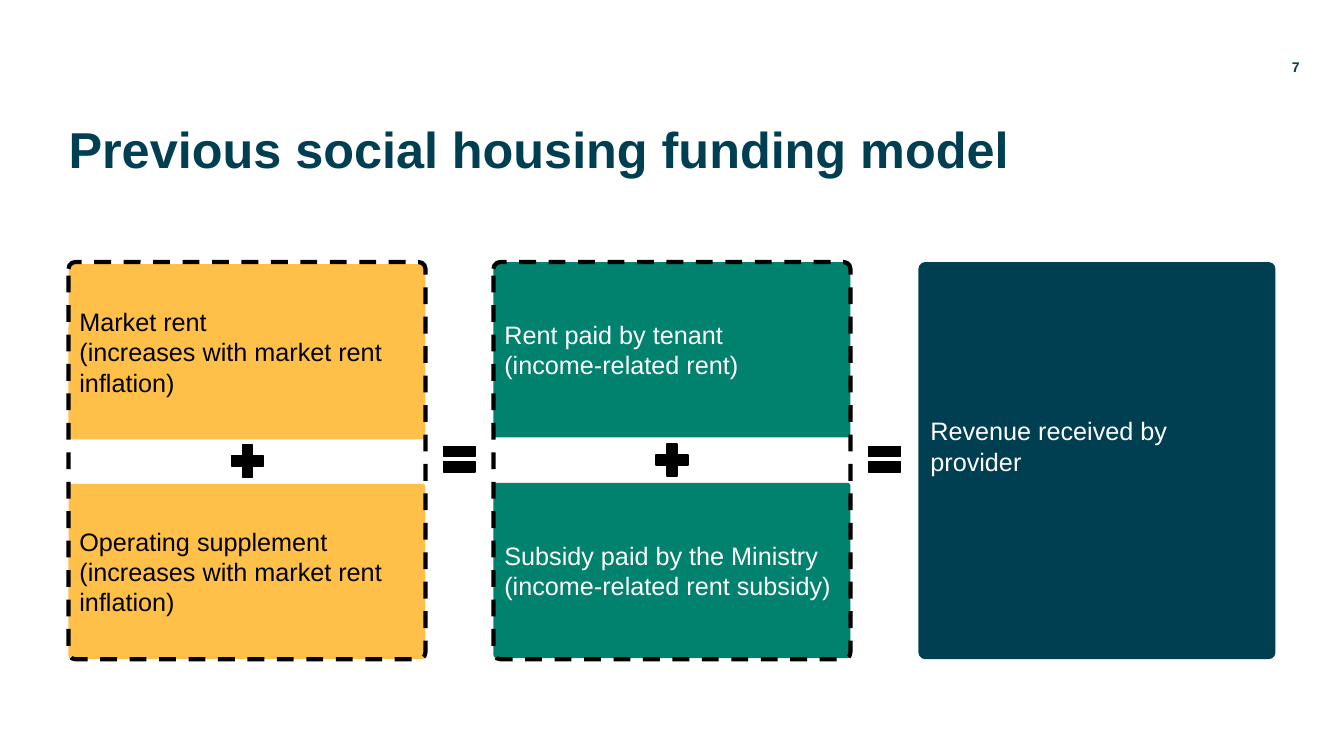
from dataclasses import dataclass
from pptx import Presentation
from pptx.dml.color import RGBColor
from pptx.enum.dml import MSO_LINE
from pptx.enum.shapes import MSO_SHAPE
from pptx.enum.text import MSO_ANCHOR, PP_ALIGN
from pptx.util import Inches, Pt

NAVY, GREEN, GOLD = "003E52", "00826E", "FFC04A"
BLACK, WHITE = "000000", "FFFFFF"
LEFT, TOP, STEP = 0.68, 2.6, 4.215
WIDE, TALL, HALF, SIGN = 3.54, 3.94, 1.74, 0.43


@dataclass
class Card:
    col: int
    top: float
    high: float
    fill: str
    ink: str
    lines: list[str]
    foot: float = 0.05


@dataclass
class Mark:
    kind: MSO_SHAPE
    left: float
    top: float


CARDS = [
    Card(2, TOP, TALL, NAVY, WHITE, ["Revenue received by provider"], 0.34),
    Card(1, TOP, HALF, GREEN, WHITE,
         ["Rent paid by tenant", "(income-related rent)"]),
    Card(1, 4.79, HALF, GREEN, WHITE,
         ["Subsidy paid by the Ministry", "(income-related rent subsidy)"]),
    Card(0, 2.62, HALF, GOLD, BLACK,
         ["Market rent", "(increases with market rent inflation)"]),
    Card(0, 4.8, HALF, GOLD, BLACK,
         ["Operating supplement", "(increases with market rent inflation)"]),
]
MARKS = [
    Mark(MSO_SHAPE.MATH_EQUAL, 4.34, 4.34),
    Mark(MSO_SHAPE.MATH_EQUAL, 8.56, 4.34),
    Mark(MSO_SHAPE.MATH_PLUS, 2.24, 4.36),
    Mark(MSO_SHAPE.MATH_PLUS, 6.45, 4.35),
]


def tint(form, code: str) -> None:
    if hasattr(form, "solid"):
        form.solid()
        form = form.fore_color
    form.rgb = RGBColor.from_string(code)


def put(item, traits: dict) -> None:
    for name, value in traits.items():
        setattr(item, name, value)


def write(frame, lines: list[str], size: int, ink: str, bold: bool,
          align: PP_ALIGN, frame_traits: dict) -> None:
    put(frame, {"word_wrap": True, **frame_traits})
    frame.text = "\n".join(lines)
    for para in frame.paragraphs:
        para.alignment = align
        put(para.font, {"name": "Arial", "size": Pt(size), "bold": bold})
        tint(para.font.color, ink)


def shape(slide, kind: MSO_SHAPE, left: float, top: float,
          wide: float, high: float):
    item = slide.shapes.add_shape(
        kind, Inches(left), Inches(top), Inches(wide), Inches(high))
    item.shadow.inherit = False
    return item


def panel(slide, col: int, top: float, high: float):
    item = shape(slide, MSO_SHAPE.ROUNDED_RECTANGLE,
                 LEFT + col * STEP, top, WIDE, high)
    item.adjustments[0] = 0.019
    return item


def card(slide, data: Card) -> None:
    item = panel(slide, data.col, data.top, data.high)
    tint(item.fill, data.fill)
    item.line.fill.background()
    write(item.text_frame, data.lines, 18, data.ink, False, PP_ALIGN.LEFT,
          {"vertical_anchor": MSO_ANCHOR.MIDDLE,
           "margin_bottom": Inches(data.foot)})


def frame(slide, col: int) -> None:
    item = panel(slide, col, TOP, TALL)
    item.fill.background()
    tint(item.line.fill, BLACK)
    put(item.line, {"width": Pt(3), "dash_style": MSO_LINE.DASH})


def mark(slide, data: Mark) -> None:
    item = shape(slide, data.kind, data.left, data.top, SIGN, SIGN)
    tint(item.fill, BLACK)
    tint(item.line.fill, BLACK)
    item.line.width = Pt(1)


def main() -> None:
    deck = Presentation()
    put(deck, {"slide_width": Inches(13.33), "slide_height": Inches(7.5)})
    slide = deck.slides.add_slide(deck.slide_layouts[5])

    title = slide.shapes.title
    put(title, {"left": Inches(LEFT), "top": Inches(1.24),
                "width": Inches(11.97), "height": Inches(0.96)})
    write(title.text_frame, ["Previous social housing funding model"],
          36, NAVY, True, PP_ALIGN.LEFT,
          {"vertical_anchor": MSO_ANCHOR.TOP, "margin_left": 0,
           "margin_top": 0, "margin_right": 0, "margin_bottom": 0})
    title.text_frame.paragraphs[0].line_spacing = 0.9

    page = slide.shapes.add_textbox(
        Inches(12.27), Inches(0.46), Inches(0.62), Inches(0.4))
    write(page.text_frame, ["7"], 10, NAVY, True, PP_ALIGN.RIGHT,
          {"vertical_anchor": MSO_ANCHOR.MIDDLE, "margin_right": 0})

    for data in CARDS:
        card(slide, data)
    for col in range(2):
        frame(slide, col)
    for data in MARKS:
        mark(slide, data)
    deck.save("out.pptx")


if __name__ == "__main__":
    main()
